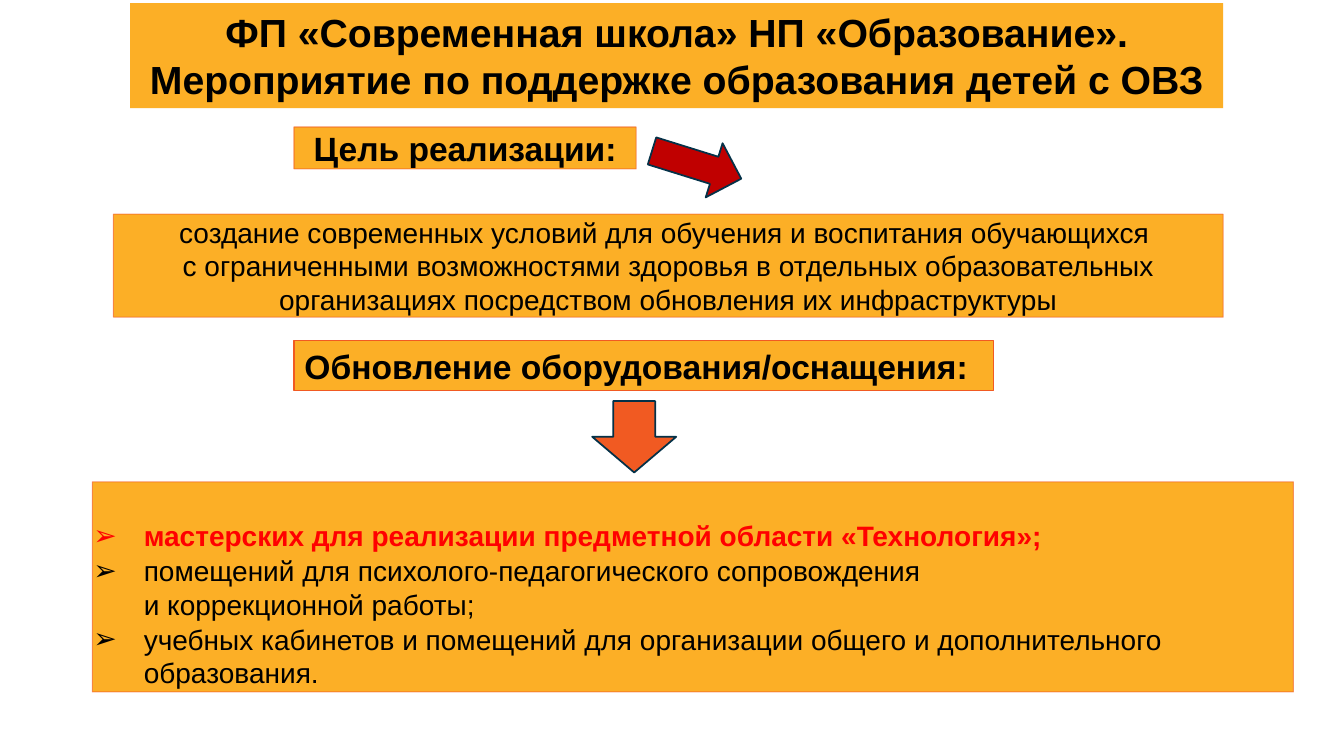
import pptx
import pptx.util
import pptx.dml.color
import pptx.enum.shapes
import pptx.enum.text
import pptx.oxml
import pptx.oxml.ns

PX = 9525  # EMU in one px, 96 px to the inch
SHAPE = pptx.enum.shapes.MSO_SHAPE
ALIGN = pptx.enum.text.PP_ALIGN
THEME = {
    "font": "Arial", "amber": "FCAF26", "orange": "F15A22", "crimson": "C00000",
    "navy": "043148", "black": "000000", "red": "FF0000",
    "title": 28, "heading": 24, "body": 20,
}


def add_block(kind, box, fill, line=None, width=0.75, alpha=None):
    sp = slide.shapes.add_shape(kind, *(v * PX for v in box))
    sp.shadow.inherit = False
    sp.fill.solid()
    sp.fill.fore_color.rgb = pptx.dml.color.RGBColor.from_string(THEME[fill])
    if line is None:
        sp.line.fill.background()
        return sp
    sp.line.color.rgb = pptx.dml.color.RGBColor.from_string(THEME[line])
    sp.line.width = pptx.util.Pt(width)
    if alpha:
        clr = sp.line._ln.find(".//" + pptx.oxml.ns.qn("a:srgbClr"))
        clr.append(pptx.oxml.parse_xml(
            f'<a:alpha {pptx.oxml.ns.nsdecls("a")} val="{alpha * 1000}"/>'))
    return sp


def format_text(p, text, size, color="black", bold=False, align=ALIGN.LEFT):
    p.alignment = align
    for i, row in enumerate(text.split("\n")):
        if i:
            p.add_line_break()
        r = p.add_run()
        r.text = row
        fmt = {"name": THEME["font"], "size": pptx.util.Pt(THEME[size]), "bold": bold}
        for name, value in fmt.items():
            setattr(r.font, name, value)
        r.font.color.rgb = pptx.dml.color.RGBColor.from_string(THEME[color])


prs = pptx.Presentation()
prs.slide_width, prs.slide_height = 1280 * PX, 720 * PX
slide = prs.slides.add_slide(prs.slide_layouts[6])

# Panels: box, line, line opacity, side inset, top inset, paragraphs
panels = [
    ((124, 3, 1041, 100), None, None, 10, 5, [
        ("ФП «Современная школа» НП «Образование». "
         "Мероприятие по поддержке образования детей с ОВЗ",
         "title", "black", True, ALIGN.CENTER)]),
    ((280, 121, 326, 40), "orange", 60, 0, 1, [
        ("Цель реализации:", "heading", "black", True, ALIGN.CENTER)]),
    ((108, 204, 1057, 98), "orange", 60, 0, 1, [
        ("создание современных условий для обучения и воспитания обучающихся \n"
         "с ограниченными возможностями здоровья в отдельных образовательных "
         "организациях посредством обновления их инфраструктуры",
         "body", "black", False, ALIGN.CENTER)]),
    ((280, 324, 666, 48), "orange", None, 10, 5, [
        ("Обновление оборудования/оснащения:", "heading", "black", True, ALIGN.LEFT)]),
    ((88, 459, 1144, 200), "orange", 60, 0, 35, [
        ("мастерских для реализации предметной области «Технология»;",
         "body", "red", True),
        ("помещений для психолого-педагогического сопровождения \n"
         "и коррекционной работы;", "body"),
        ("учебных кабинетов и помещений для организации общего и дополнительного "
         "образования.", "body")]),
]
for box, line, alpha, side, top, paragraphs in panels:
    sp = add_block(SHAPE.RECTANGLE, box, "amber", line, alpha=alpha)
    tf = sp.text_frame
    frame = {"word_wrap": True, "vertical_anchor": pptx.enum.text.MSO_ANCHOR.TOP,
             "margin_left": side * PX, "margin_right": side * PX,
             "margin_top": top * PX, "margin_bottom": 0}
    for name, value in frame.items():
        setattr(tf, name, value)
    for i, paragraph in enumerate(paragraphs):
        p = tf.paragraphs[0] if i == 0 else tf.add_paragraph()
        if len(paragraphs) > 1:
            # Arrow bullets with a hanging indent
            pPr = p._p.get_or_add_pPr()
            pPr.set("marL", str(49 * PX))
            pPr.set("indent", str(-48 * PX))
            for bullet in (f'buFont {pptx.oxml.ns.nsdecls("a")} typeface="{THEME["font"]}"',
                           f'buChar {pptx.oxml.ns.nsdecls("a")} char="➢"'):
                pPr.append(pptx.oxml.parse_xml(f"<a:{bullet}/>"))
        if i:
            p.space_before = pptx.util.Pt(1)
        format_text(p, *paragraph)

# Arrows
add_block(SHAPE.DOWN_ARROW, (564, 382, 80, 68), "orange", "navy", 1.25)
goal_arrow = add_block(SHAPE.RIGHT_ARROW, (619, 130, 89, 54), "crimson", "navy", 1.25)
goal_arrow.rotation = 17.3

prs.save("out.pptx")
